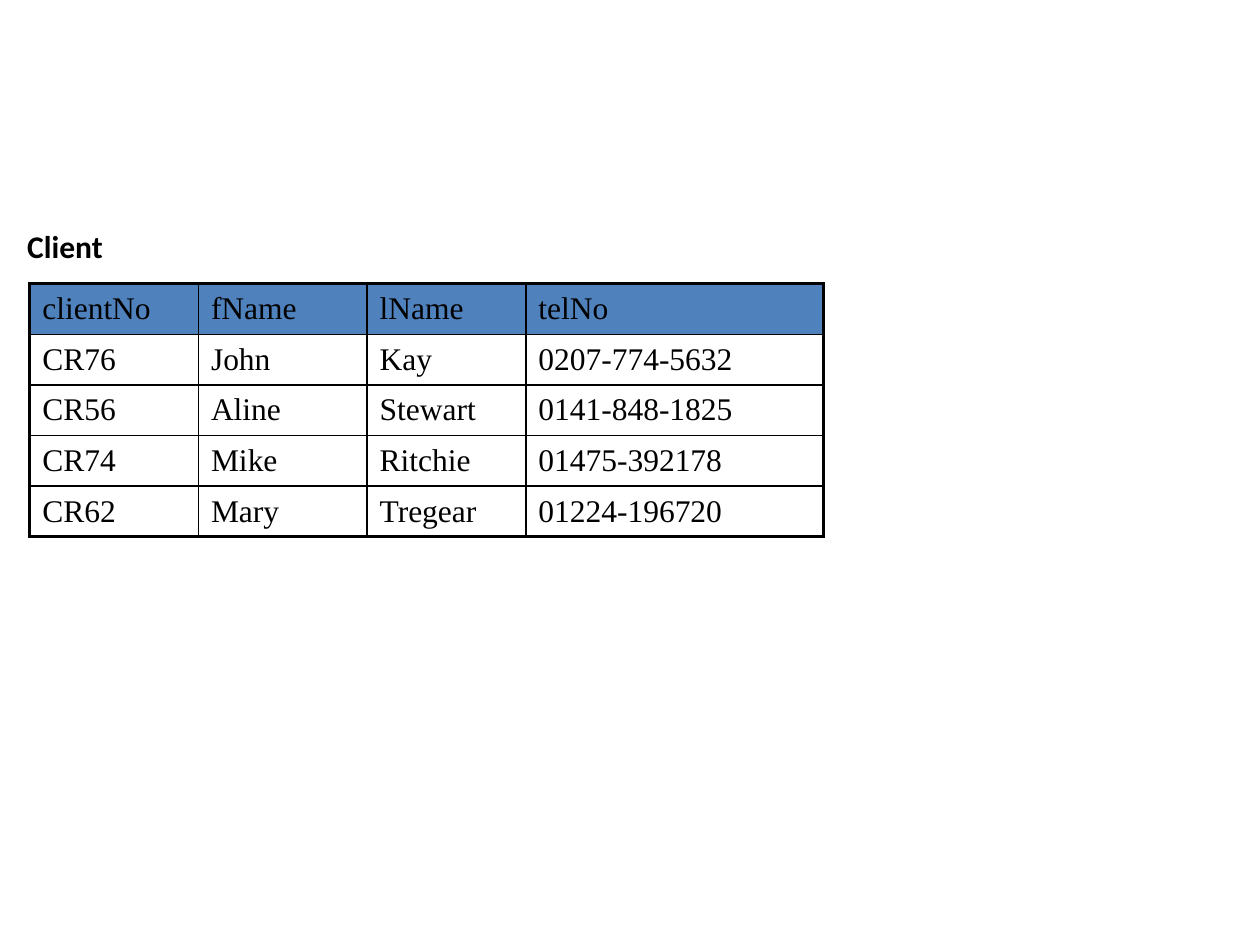
import pptx
import pptx.util
import pptx.dml.color
import pptx.enum.text
import pptx.oxml.ns
import lxml.etree

Cm = pptx.util.Cm
Pt = pptx.util.Pt

COLORS = {"ink": "000000", "head": "4F81BD"}
ROWS = [
    ["clientNo", "fName", "lName", "telNo"],
    ["CR76", "John", "Kay", "0207-774-5632"],
    ["CR56", "Aline", "Stewart", "0141-848-1825"],
    ["CR74", "Mike", "Ritchie", "01475-392178"],
    ["CR62", "Mary", "Tregear", "01224-196720"],
]
WIDTHS = [3.4, 3.4, 3.2, 6]
HEIGHT = 1.02
THIN, THICK = 1, 2.25


def color(name):
    return pptx.dml.color.RGBColor.from_string(COLORS[name])


def style(frame, face, bold=False):
    for par in frame.paragraphs:
        for run in par.runs:
            run.font.name = face
            run.font.size = Pt(18)
            run.font.bold = bold
            run.font.color.rgb = color("ink")


def border(cell, side, width):
    qn = pptx.oxml.ns.qn
    props = cell._tc.get_or_add_tcPr()
    line = lxml.etree.SubElement(props, qn("a:ln" + side), w=str(Pt(width)))
    fill = lxml.etree.SubElement(line, qn("a:solidFill"))
    lxml.etree.SubElement(fill, qn("a:srgbClr"), val=COLORS["ink"])


def add_label(slide, text, left, top, width, height):
    box = slide.shapes.add_textbox(Cm(left), Cm(top), Cm(width), Cm(height))
    frame = box.text_frame
    frame.word_wrap = True
    frame.text = text
    style(frame, "Calibri", bold=True)


def fill_cell(cell, text, edges, head):
    cell.text_frame.text = text
    cell.vertical_anchor = pptx.enum.text.MSO_ANCHOR.MIDDLE
    style(cell.text_frame, "Times New Roman")
    for side, outer in edges.items():
        border(cell, side, THICK if outer else THIN)
    if head:
        cell.fill.solid()
        cell.fill.fore_color.rgb = color("head")
    else:
        cell.fill.background()


def add_grid(slide, rows, left, top):
    frame = slide.shapes.add_table(
        len(rows), len(WIDTHS), Cm(left), Cm(top),
        Cm(sum(WIDTHS)), Cm(HEIGHT * len(rows)))
    table = frame.table
    table.first_row = False
    table.horz_banding = False
    for col, width in zip(table.columns, WIDTHS):
        col.width = Cm(width)
    for r, row in enumerate(rows):
        table.rows[r].height = Cm(HEIGHT)
        for c, text in enumerate(row):
            edges = {"L": c == 0, "R": c == len(row) - 1,
                     "T": r == 0, "B": r == len(rows) - 1}
            fill_cell(table.cell(r, c), text, edges, head=r == 0)


def main():
    deck = pptx.Presentation()
    deck.slide_width = Cm(25.4)
    deck.slide_height = Cm(19.05)
    slide = deck.slides.add_slide(deck.slide_layouts[6])
    add_grid(slide, ROWS, 0.6, 5.72)
    add_label(slide, "Client", 0.3, 4.45, 3.78, 1.02)
    deck.save("out.pptx")


if __name__ == "__main__":
    main()
